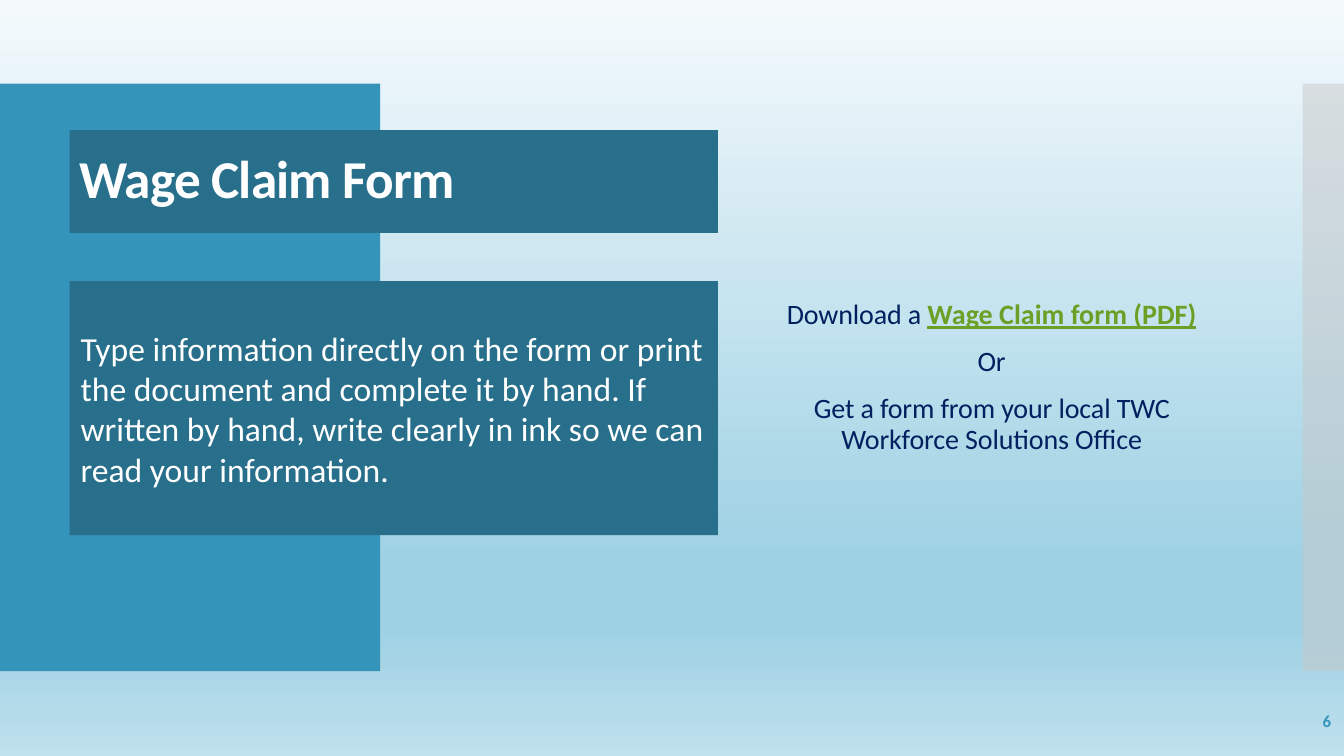
from lxml import etree
from pptx import Presentation
from pptx.dml.color import RGBColor
from pptx.enum.shapes import MSO_SHAPE
from pptx.enum.text import MSO_ANCHOR, PP_ALIGN
from pptx.oxml.ns import qn
from pptx.util import Inches, Pt

RECTANGLE = MSO_SHAPE.RECTANGLE
MIDDLE = MSO_ANCHOR.MIDDLE
LEFT, CENTER, RIGHT = PP_ALIGN.LEFT, PP_ALIGN.CENTER, PP_ALIGN.RIGHT
BLUE, DARK_BLUE, NAVY, GREEN = "3494BA", "276F8B", "002060", "6B9F25"


def color(value):
    return RGBColor.from_string(value)


def style_run(run, size, value, bold=False, spacing=0):
    run.font.name = "Calibri"
    run.font.size = Pt(size)
    run.font.color.rgb = color(value)
    run.font.bold = bold
    if spacing:
        run.font._element.set("spc", str(round(spacing * 100)))


presentation = Presentation()
presentation.slide_width = Inches(13.33)
presentation.slide_height = Inches(7.5)
slide = presentation.slides.add_slide(presentation.slide_layouts[6])

background = slide.background.fill
background.gradient()
background.gradient_angle = 270
stops = slide._element.find(".//" + qn("a:gsLst"))
for stop in list(stops):
    stops.remove(stop)
for percent, value in [(0, "F4FAFC"), (74, "9FD1E4"), (83, "9FD1E4"), (100, "BFE0ED")]:
    stop = etree.SubElement(stops, qn("a:gs"), pos=str(percent * 1000))
    etree.SubElement(stop, qn("a:srgbClr"), val=value)

panels = []
for left, top, width, height, value in [
    (0, 0.83, 3.77, 5.83, BLUE),
    (12.92, 0.83, 0.41, 5.83, "C8C8C8"),
    (0.69, 1.29, 6.43, 1.02, DARK_BLUE),
    (0.69, 2.79, 6.43, 2.52, DARK_BLUE),
]:
    shape = slide.shapes.add_shape(
        RECTANGLE, Inches(left), Inches(top), Inches(width), Inches(height)
    )
    shape.shadow.inherit = False
    shape.fill.solid()
    shape.fill.fore_color.rgb = color(value)
    shape.line.fill.background()
    panels.append(shape)
left_band, right_band, title, instructions = panels

right_color = right_band._element.spPr.find(qn("a:solidFill")).find(qn("a:srgbClr"))
etree.SubElement(right_color, qn("a:alpha"), val="50000")

for shape, text, size, bold, spacing in [
    (title, "Wage Claim Form", 38, True, -0.6),
    (
        instructions,
        "Type information directly on the form or print the document and complete "
        "it by hand. If written by hand, write clearly in ink so we can read your "
        "information.",
        24,
        False,
        0,
    ),
]:
    shape.text_frame.text = text
    shape.text_frame.word_wrap = True
    shape.text_frame.vertical_anchor = MIDDLE
    paragraph = shape.text_frame.paragraphs[0]
    paragraph.alignment = LEFT
    style_run(paragraph.runs[0], size, "FFFFFF", bold, spacing)
title.text_frame.paragraphs[0].line_spacing = 0.9
instructions.text_frame.margin_left = Inches(0.11)

options = slide.shapes.add_textbox(Inches(7.44), Inches(0.95), Inches(4.79), Inches(5.6))
options.text_frame.word_wrap = True
options.text_frame.vertical_anchor = MIDDLE
options.text_frame.text = (
    "Download a \nOr\nGet a form from your local TWC Workforce Solutions Office"
)
for index, paragraph in enumerate(options.text_frame.paragraphs):
    paragraph.alignment = CENTER
    paragraph.line_spacing = 0.9
    paragraph.space_before = Pt(12 if index else 0)
    style_run(paragraph.runs[0], 20, NAVY, spacing=-0.1)
form_name = options.text_frame.paragraphs[0].add_run()
form_name.text = "Wage Claim form (PDF)"
style_run(form_name, 20, GREEN, bold=True)
form_name.font.underline = True

page_number = slide.shapes.add_textbox(Inches(11.63), Inches(6.95), Inches(1.67), Inches(0.4))
page_number.text_frame.word_wrap = True
page_number.text_frame.vertical_anchor = MIDDLE
page_number.text_frame.text = "6"
paragraph = page_number.text_frame.paragraphs[0]
paragraph.alignment = RIGHT
style_run(paragraph.runs[0], 12, BLUE, bold=True)

presentation.save("out.pptx")
